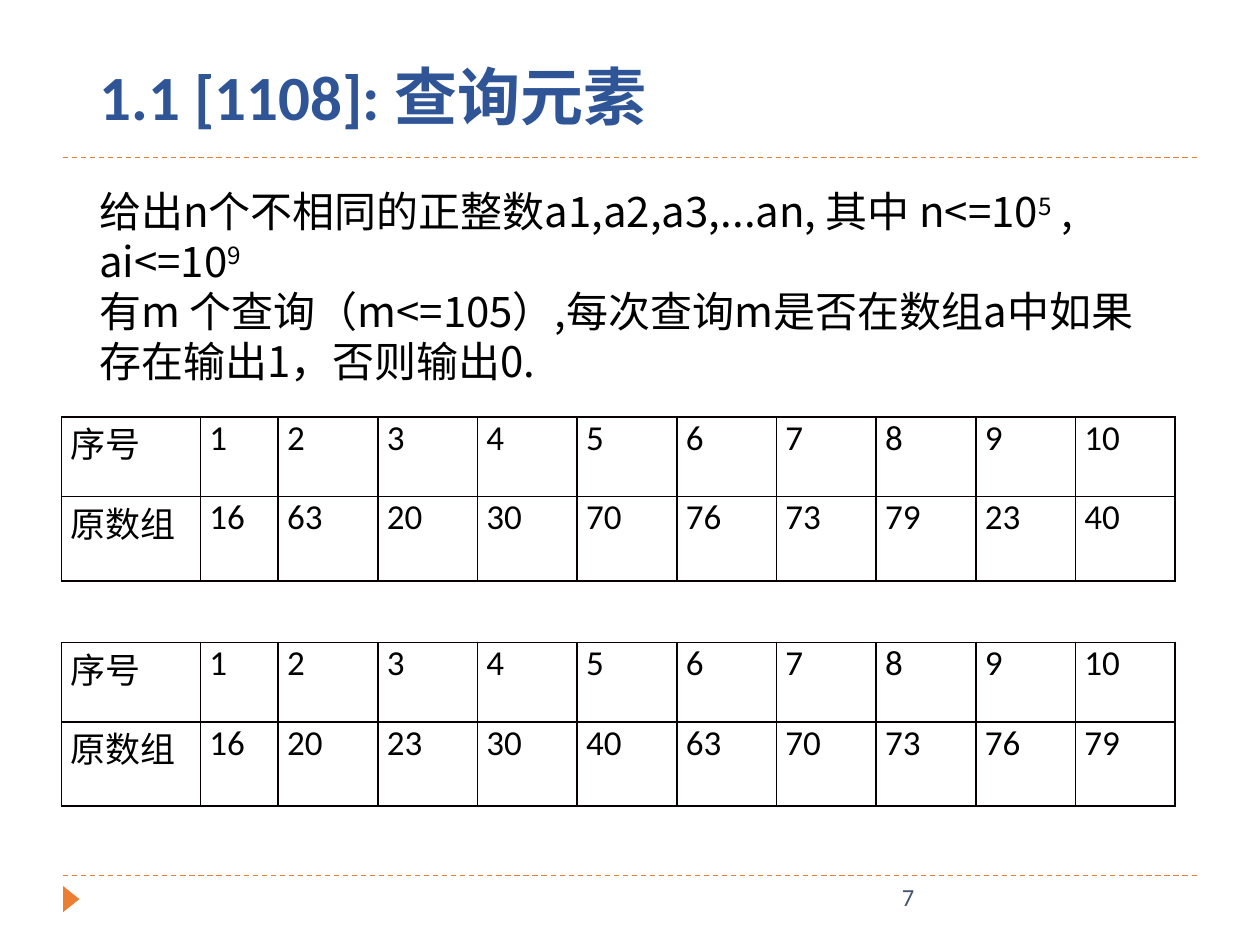
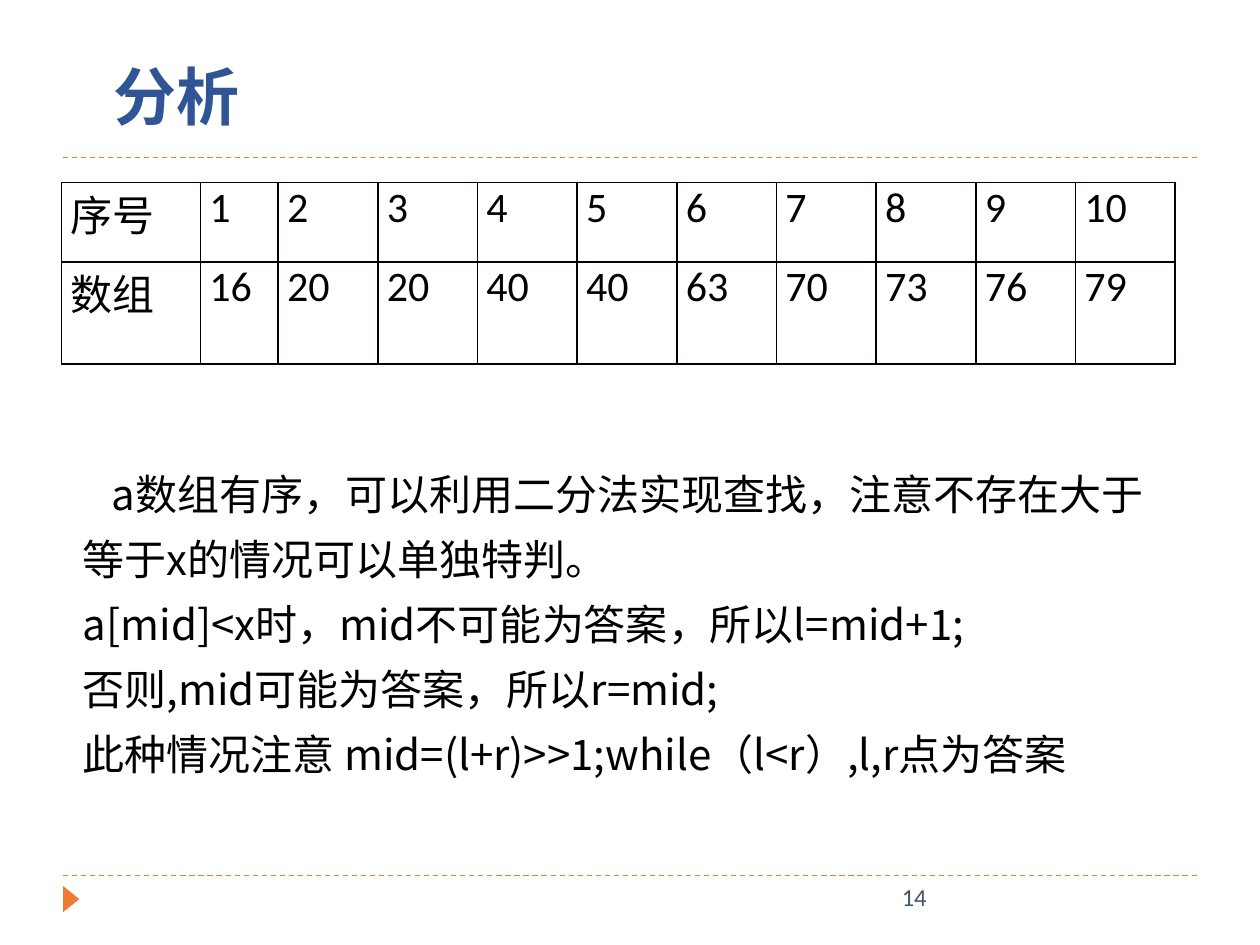
import pptx
import pptx.dml.color
import pptx.enum.dml
import pptx.enum.shapes
import pptx.enum.text
import pptx.oxml
import pptx.oxml.ns
import pptx.util
from lxml import etree

Cm, Pt = pptx.util.Cm, pptx.util.Pt
qn = pptx.oxml.ns.qn

COLORS = {"accent": "ED7D31", "title": "2F5597", "number": "44546A",
          "text": "000000", "border": "080000"}
LATIN, CJK = "Calibri", "Noto Sans CJK SC"
COLUMNS = [2.8, 1.57] + [2.01] * 9
TABLE_LEFT = 1.24
INDEXES = list(range(1, 11))


def rgb(name):
    return pptx.dml.color.RGBColor.from_string(COLORS[name])


def add_text(p, text, size=24, font=CJK, color="text", bold=False, base=None):
    """Append a formatted run to a paragraph."""
    r = p.add_run()
    r.text = text
    r.font.size, r.font.bold = Pt(size), bold
    r.font.color.rgb = rgb(color)
    r.font.name = font
    rPr = r.font._element
    etree.SubElement(rPr, qn("a:ea")).set("typeface", CJK)
    if base:
        rPr.set("baseline", str(base * 1000))


def indent_first_line(p, width):
    p._p.get_or_add_pPr().set("indent", str(Cm(width)))


def add_box(slide, box):
    tf = slide.shapes.add_textbox(*map(Cm, box)).text_frame
    tf.word_wrap = True
    return tf


def add_rule(slide, y):
    line = slide.shapes.add_connector(
        pptx.enum.shapes.MSO_CONNECTOR.STRAIGHT, Cm(1.27), Cm(y), Cm(24.13), Cm(y))
    line.line.color.rgb = rgb("accent")
    line.line.width = Pt(0.75)
    line.line.dash_style = pptx.enum.dml.MSO_LINE.DASH
    etree.SubElement(line._element.spPr, qn("a:effectLst"))


def add_frame(slide, number):
    """Rules, corner marker and slide number."""
    for y in (17.65, 3.18):
        add_rule(slide, y)
    marker = slide.shapes.add_shape(
        pptx.enum.shapes.MSO_SHAPE.ISOSCELES_TRIANGLE,
        Cm(1.17), Cm(17.96), Cm(0.53), Cm(0.33))
    marker.rotation = 90
    marker.shadow.inherit = False
    marker.fill.solid()
    marker.fill.fore_color.rgb = rgb("accent")
    marker.line.fill.background()
    tf = add_box(slide, (17.93, 17.65, 5.72, 1.02))
    add_text(tf.paragraphs[0], str(number), size=14, font=LATIN, color="number")


def add_title(slide, text, indent=0):
    title = slide.shapes.title
    title.left, title.top, title.width, title.height = map(Cm, (1.75, 1.02, 21.92, 1.98))
    tf = title.text_frame
    tf.vertical_anchor = pptx.enum.text.MSO_ANCHOR.MIDDLE
    p = tf.paragraphs[0]
    p.alignment = pptx.enum.text.PP_ALIGN.LEFT
    p.line_spacing = 0.9
    indent_first_line(p, indent)
    add_text(p, text, size=36, font=LATIN, color="title", bold=True)


def add_body(slide, box, paragraphs, spacing, indent=0):
    """Each paragraph is a list of (text, superscript percent) pairs."""
    tf = add_box(slide, box)
    for i, runs in enumerate(paragraphs):
        p = tf.add_paragraph() if i else tf.paragraphs[0]
        p.line_spacing = Pt(spacing)
        for text, base in runs:
            add_text(p, text, base=base)
    indent_first_line(tf.paragraphs[0], indent)


def style_cell(cell):
    cell.margin_left = cell.margin_right = Cm(0.18)
    cell.margin_top = cell.margin_bottom = 0
    tcPr = cell._tc.get_or_add_tcPr()
    for side in ("lnL", "lnR", "lnT", "lnB"):
        ln = etree.SubElement(tcPr, qn("a:" + side), w=str(Pt(1)))
        fill = etree.SubElement(ln, qn("a:solidFill"))
        etree.SubElement(fill, qn("a:srgbClr"), val=COLORS["border"])
    cell.fill.background()


def add_array_table(slide, top, heights, label, values, size):
    """Index row above the row of array values."""
    rows = [["序号"] + INDEXES, [label] + values]
    table = slide.shapes.add_table(
        len(rows), len(COLUMNS), Cm(TABLE_LEFT), Cm(top),
        Cm(sum(COLUMNS)), Cm(sum(heights))).table
    table.first_row = table.horz_banding = False
    for column, width in zip(table.columns, COLUMNS):
        column.width = Cm(width)
    for i, (row, height) in enumerate(zip(rows, heights)):
        table.rows[i].height = Cm(height)
        for j, value in enumerate(row):
            cell = table.cell(i, j)
            style_cell(cell)
            add_text(cell.text_frame.paragraphs[0], str(value), size=size,
                     font=LATIN if j else CJK)


def new_slide(prs, number, title, indent=0):
    slide = prs.slides.add_slide(prs.slide_layouts[5])
    add_frame(slide, number)
    add_title(slide, title, indent)
    return slide


def problem_slide(prs):
    slide = new_slide(prs, 7, "1.1 [1108]: 查询元素")
    values = [16, 63, 20, 30, 70, 76, 73, 79, 23, 40]
    # Unsorted, then sorted array
    for top, array in ((8.41, values), (12.95, sorted(values))):
        add_array_table(slide, top, (1.6, 1.7), "原数组", array, 20)
    add_body(slide, (1.75, 3.63, 22.17, 4.37), [
        [("给出n个不相同的正整数a1,a2,a3,...an, 其中 n<=10", None), ("5", 30),
         (" , ai<=10", None), ("9", 30)],
        [("有m 个查询（m<=105）,每次查询m是否在数组a中如果存在输出1，否则输出0.", None)],
    ], spacing=28.5)


def analysis_slide(prs):
    slide = new_slide(prs, 14, "分析", indent=0.28)
    add_array_table(slide, 3.68, (1.6, 2.06), "数组",
                    [16, 20, 20, 40, 40, 63, 70, 73, 76, 79], 24)
    lines = ["a数组有序，可以利用二分法实现查找，注意不存在大于等于x的情况可以单独特判。",
             "a[mid]<x时，mid不可能为答案，所以l=mid+1;",
             "否则,mid可能为答案，所以r=mid;",
             "此种情况注意 mid=(l+r)>>1;while（l<r）,l,r点为答案"]
    add_body(slide, (1.42, 9.02, 22.4, 6.91), [[(line, None)] for line in lines],
             spacing=37.2, indent=0.58)


def main():
    prs = pptx.Presentation()
    prs.slide_width, prs.slide_height = Cm(25.4), Cm(19.05)
    problem_slide(prs)
    analysis_slide(prs)
    prs.save("out.pptx")


if __name__ == "__main__":
    main()
